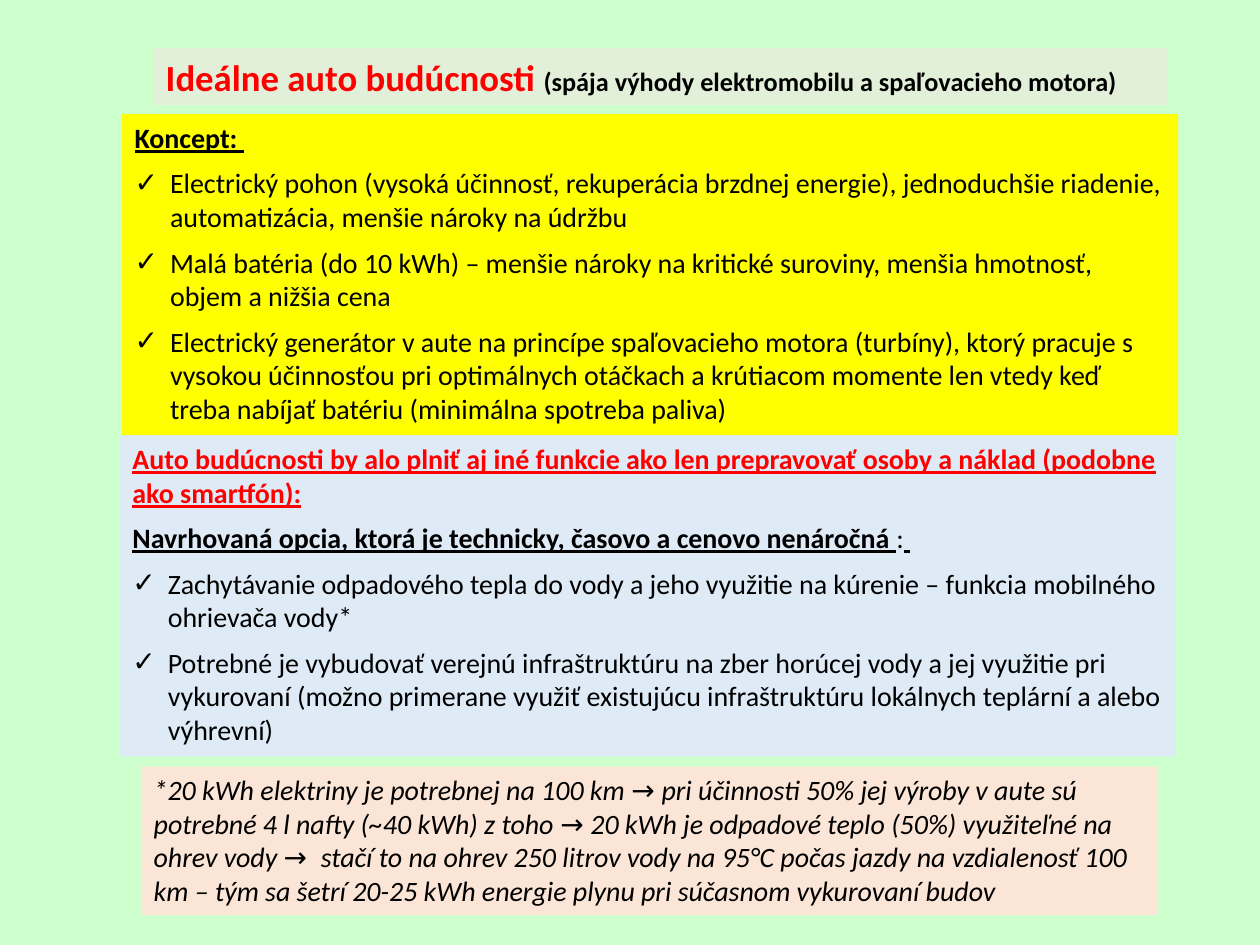
from pptx import Presentation
from pptx.dml.color import RGBColor
from pptx.enum.text import MSO_ANCHOR, MSO_AUTO_SIZE, PP_ALIGN
from pptx.util import Pt
from lxml.etree import SubElement
from pptx.oxml.ns import qn

MINT = RGBColor(0xCC, 0xFF, 0xCC)
YELLOW = RGBColor(0xFF, 0xFF, 0x00)
PALE_GREEN = RGBColor(0xE2, 0xF0, 0xD9)
PALE_BLUE = RGBColor(0xDE, 0xEB, 0xF7)
PALE_ORANGE = RGBColor(0xFB, 0xE5, 0xD6)
RED = RGBColor(0xFF, 0x00, 0x00)
BLACK = RGBColor(0x00, 0x00, 0x00)


class SlideBuilder:
    font_name = "Calibri"
    symbol_font = "Roboto"
    text_size = 16
    gap = 6.8
    indent = 20.25

    def __init__(self, deck, layout_index):
        self.slide = deck.slides.add_slide(deck.slide_layouts[layout_index])
        self.slide.background.fill.solid()
        self.slide.background.fill.fore_color.rgb = MINT

    def prepare(self, box, left, top, width, height, fill):
        box.left, box.top, box.width, box.height = map(Pt, (left, top, width, height))
        box.fill.solid()
        box.fill.fore_color.rgb = fill
        frame = box.text_frame
        frame.word_wrap = True
        frame.auto_size = MSO_AUTO_SIZE.NONE
        frame.vertical_anchor = MSO_ANCHOR.TOP
        return frame

    def style(self, para, bold=False, italic=False, underline=False, color=BLACK):
        para.alignment = PP_ALIGN.LEFT
        font = para.font
        font.name, font.size = self.font_name, Pt(self.text_size)
        font.bold, font.italic, font.underline = bold, italic, underline
        font.color.rgb = color

    def span(self, para, text):
        span = para.add_run()
        span.text = text
        return span

    def title(self, area, fill, parts):
        para = self.prepare(self.slide.shapes.title, *area, fill).paragraphs[0]
        self.style(para, bold=True)
        for text, size, color in parts:
            span = self.span(para, text)
            span.font.size = Pt(size)
            span.font.color.rgb = color

    def list_box(self, index, area, fill, headings, items):
        frame = self.prepare(self.slide.placeholders[index], *area, fill)
        entries = [(spans, color, False) for spans, color in headings]
        entries += [([(item, False)], BLACK, True) for item in items]
        for position, (spans, color, bulleted) in enumerate(entries):
            para = frame.add_paragraph() if position else frame.paragraphs[0]
            para.space_before = Pt(self.gap if position else 0)
            self.bullet(para, bulleted)
            self.style(para, bold=not bulleted, underline=not bulleted, color=color)
            for text, strong in spans:
                span = self.span(para, text)
                if strong == bulleted:
                    span.font.bold = span.font.underline = strong

    def bullet(self, para, bulleted):
        properties = para._p.get_or_add_pPr()
        indent = Pt(self.indent) if bulleted else 0
        properties.set("marL", str(indent))
        properties.set("indent", str(-indent))
        if bulleted:
            SubElement(properties, qn("a:buChar")).set("char", "✓")
        else:
            SubElement(properties, qn("a:buNone"))

    def note(self, area, fill, parts):
        box = self.slide.shapes.add_textbox(0, 0, 0, 0)
        para = self.prepare(box, *area, fill).paragraphs[0]
        self.style(para, italic=True)
        for text in parts:
            span = self.span(para, text)
            if text.startswith("→"):
                span.font.name = self.symbol_font


def main():
    deck = Presentation()
    deck.slide_width, deck.slide_height = Pt(720), Pt(540)
    page = SlideBuilder(deck, 3)
    page.title((87.5, 27.5, 580, 32.5), PALE_GREEN, [
        ("Ideálne auto budúcnosti ", 21, RED),
        ("(spája výhody elektromobilu a spaľovacieho motora)", 15, BLACK),
    ])
    page.list_box(1, (69.75, 65.25, 603.5, 183.5), YELLOW, [
        ([("Koncept: ", True)], BLACK),
    ], [
        "Electrický pohon (vysoká účinnosť, rekuperácia brzdnej energie), jednoduchšie riadenie, automatizácia, menšie nároky na údržbu",
        "Malá batéria (do 10 kWh) – menšie nároky na kritické suroviny, menšia hmotnosť, objem a nižšia cena",
        "Electrický generátor v aute na princípe spaľovacieho motora (turbíny), ktorý pracuje s vysokou účinnosťou pri optimálnych otáčkach a krútiacom momente len vtedy keď treba nabíjať batériu (minimálna spotreba paliva)",
    ])
    page.list_box(2, (68.5, 248.75, 603.5, 183.5), PALE_BLUE, [
        ([("Auto budúcnosti by alo plniť aj iné funkcie ako len prepravovať osoby a náklad (podobne ako smartfón):", True)], RED),
        ([("Navrhovaná opcia, ktorá je technicky, časovo a cenovo nenáročná ", True),
          (":", False), (" ", True)], BLACK),
    ], [
        "Zachytávanie odpadového tepla do vody a jeho využitie na kúrenie – funkcia mobilného ohrievača vody*",
        "Potrebné je vybudovať verejnú infraštruktúru na zber horúcej vody a jej využitie pri vykurovaní (možno primerane využiť existujúcu infraštruktúru lokálnych teplární a alebo výhrevní)",
    ])
    page.note((80.75, 438, 580.5, 85), PALE_ORANGE, [
        "*20 kWh elektriny je potrebnej na 100 km ",
        "→ ",
        "pri účinnosti 50% jej výroby v aute sú potrebné 4 l nafty (~40 kWh) z toho ",
        "→ ",
        "20 kWh je odpadové teplo (50%) využiteľné na ohrev vody ",
        "→  ",
        "stačí to na ohrev 250 litrov vody na 95°C počas jazdy na vzdialenosť 100 km – tým sa šetrí 20-25 kWh energie plynu pri súčasnom vykurovaní budov",
    ])
    deck.save("out.pptx")


if __name__ == "__main__":
    main()
